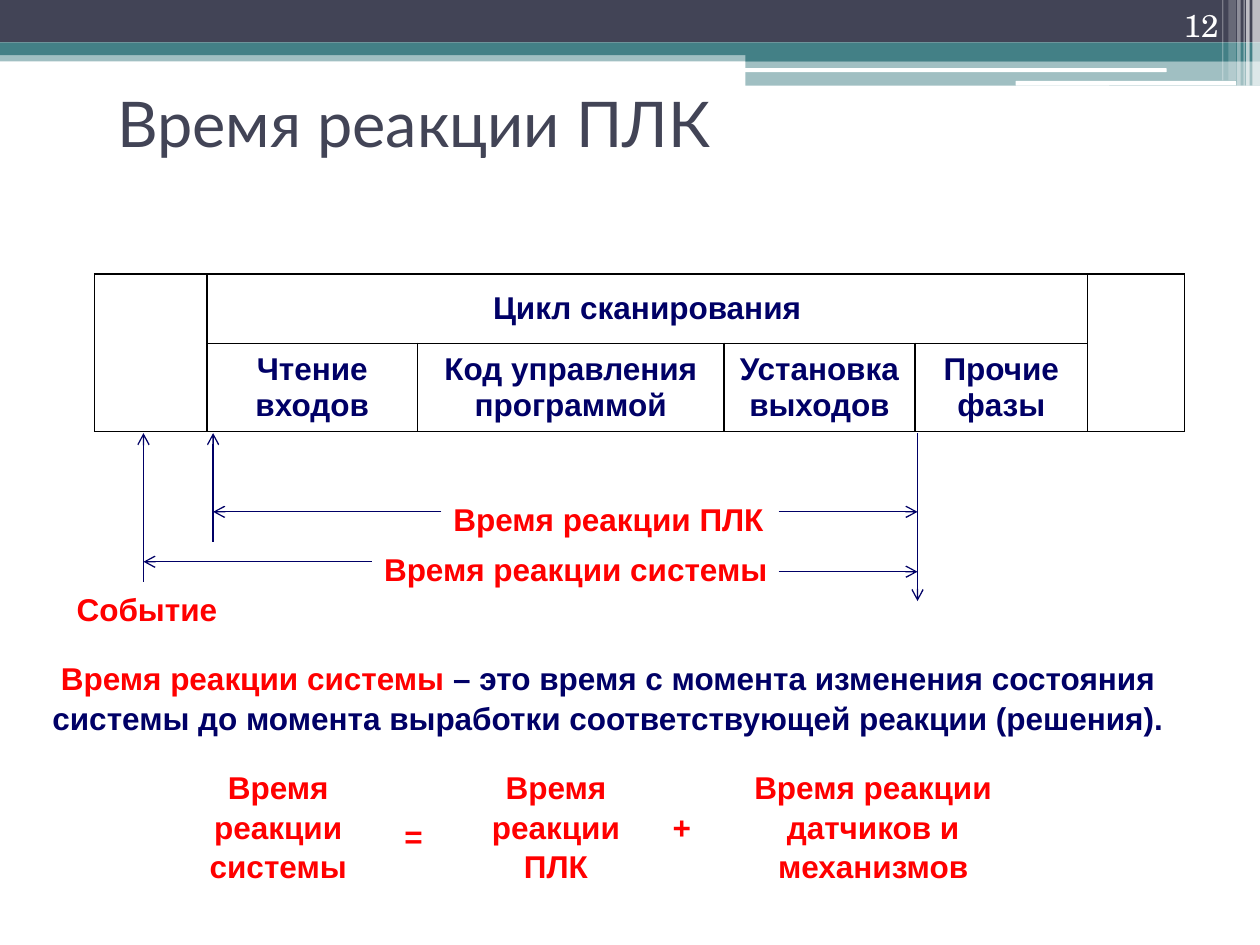
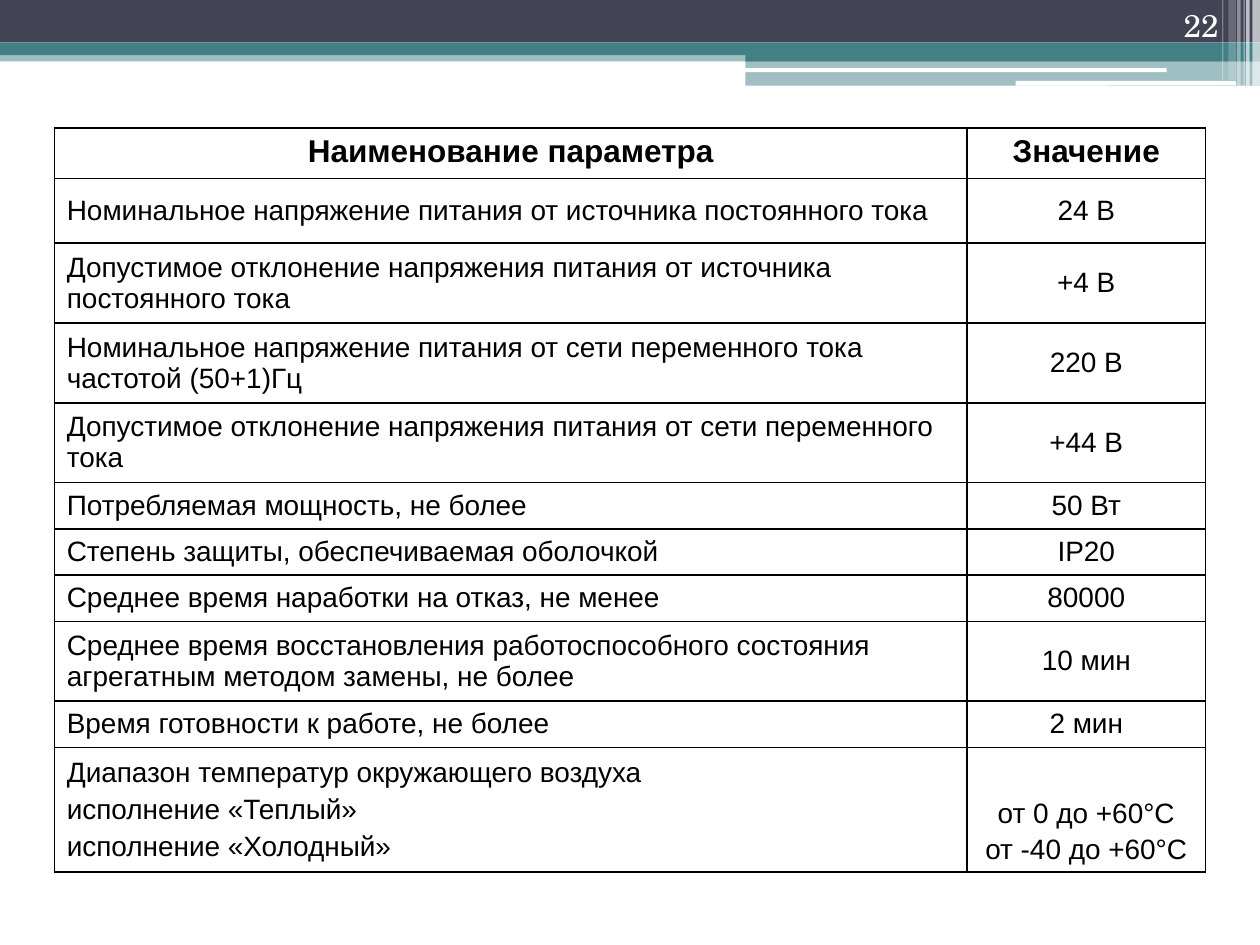
from lxml import etree
from pptx import Presentation
from pptx.dml.color import RGBColor
from pptx.enum.shapes import MSO_CONNECTOR, MSO_SHAPE
from pptx.enum.text import MSO_ANCHOR as Anchor, PP_ALIGN as Align
from pptx.oxml.ns import qn
from pptx.util import Pt

COLOURS = {
    "slate": "424456",
    "teal": "438086",
    "white": "FFFFFF",
    "black": "000000",
    "navy": "000066",
    "red": "FF0000",
}
BODY_FONT, TITLE_FONT, NUMBER_FONT = "Arial", "Lato", "TeX Gyre Schola"

# Header bands: left, top, width, height, colour, opacity in percent
BANDS = [
    (0, 28.8, 720, 6.3, "teal", 50),
    (0, 0, 720, 24.3, "slate", 100),
    (0, 24.3, 720, 7.2, "teal", 100),
    (426, 28, 294, 7.2, "teal", 100),
    (426, 35.2, 294, 13.7, "teal", 50),
]
RULES = [(425.5, 39, 241.2, 2.2), (580.3, 46.3, 126, 2.6)]
# Vertical stripes at the right edge: left, width, height, opacity
STRIPES = [
    (715.7, 4.3, 49, 65),
    (712.1, 2, 49, 65),
    (710.6, 0.7, 49, 60),
    (707, 2, 49, 40),
    (702, 4.3, 46, 20),
    (698.4, 0.7, 46, 30),
]

CYCLE_PHASES = ["Чтение входов", "Код управления программой",
                "Установка выходов", "Прочие фазы"]

# Parameter, value, row height
PARAMETERS = [
    ("Номинальное напряжение питания от источника постоянного тока", "24 В", 36.9),
    ("Допустимое отклонение напряжения питания от источника постоянного тока", "+4 В", 45.6),
    ("Номинальное напряжение питания от сети переменного тока частотой (50+1)Гц", "220 В", 45.6),
    ("Допустимое отклонение напряжения питания от сети переменного тока", "+44 В", 45.6),
    ("Потребляемая мощность, не более", "50 Вт", 26.3),
    ("Степень защиты, обеспечиваемая оболочкой", "IP20", 26.3),
    ("Среднее время наработки на отказ, не менее", "80000", 26.3),
    ("Среднее время восстановления работоспособного состояния "
     "агрегатным методом замены, не более", "10 мин", 45.6),
    ("Время готовности к работе, не более", "2 мин", 26.3),
    ("Диапазон температур окружающего воздуха\nисполнение «Теплый»\nисполнение «Холодный»",
     "от 0 до +60°С\nот -40 до +60°С", 71),
]


def rgb(name):
    return RGBColor.from_string(COLOURS[name])


def points(*lengths):
    return [Pt(length) for length in lengths]


def add_span(para, text, colour, size=18, bold=False, font=BODY_FONT):
    span = para.add_run()
    span.text = text
    span.font.name, span.font.size, span.font.bold = font, Pt(size), bold
    span.font.color.rgb = rgb(colour)


def add_box(page, area, spans, align=Align.LEFT, anchor=Anchor.TOP,
            spacing=1.05, **style):
    """Add a text box of one paragraph; spans are (text, colour) pairs."""
    frame = page.shapes.add_textbox(*points(*area)).text_frame
    frame.word_wrap = True
    frame.vertical_anchor = anchor
    para = frame.paragraphs[0]
    para.alignment, para.line_spacing = align, spacing
    for text, colour in spans:
        add_span(para, text, colour, **style)


def add_label(page, area, text, align=Align.LEFT):
    add_box(page, area, [(text, "red")], align, bold=True)


def add_band(page, area, colour, opacity=100, kind=MSO_SHAPE.RECTANGLE):
    band = page.shapes.add_shape(kind, *points(*area))
    band.shadow.inherit = False
    band.line.fill.background()
    band.fill.solid()
    band.fill.fore_color.rgb = rgb(colour)
    if opacity < 100:
        tint = band.fill._xPr.find(".//" + qn("a:srgbClr"))
        etree.SubElement(tint, qn("a:alpha"), val=str(opacity * 1000))


def add_arrow(page, *ends):
    arrow = page.shapes.add_connector(MSO_CONNECTOR.STRAIGHT, *points(*ends))
    arrow.line.color.rgb = rgb("navy")
    arrow.line.width = Pt(0.75)
    etree.SubElement(arrow.line._get_or_add_ln(), qn("a:tailEnd"), type="arrow")
    etree.SubElement(arrow._element.spPr, qn("a:effectLst"))


def style_cell(cell):
    """Black one-point borders on all sides and no fill."""
    properties = cell._tc.get_or_add_tcPr()
    for side in ("lnL", "lnR", "lnT", "lnB"):
        edge = etree.SubElement(properties, qn("a:" + side), w=str(Pt(1)))
        fill = etree.SubElement(edge, qn("a:solidFill"))
        etree.SubElement(fill, qn("a:srgbClr"), val=COLOURS["black"])
    cell.fill.background()


def add_grid(page, left, top, widths, heights):
    area = points(left, top, sum(widths), sum(heights))
    table = page.shapes.add_table(len(heights), len(widths), *area).table
    table.first_row = table.horz_banding = False
    for column, width in zip(table.columns, widths):
        column.width = Pt(width)
    for row, height in zip(table.rows, heights):
        row.height = Pt(height)
    for cell in table.iter_cells():
        style_cell(cell)
    return table


def fill_cell(cell, text, colour, size=18, bold=False,
              align=Align.CENTER, anchor=Anchor.MIDDLE):
    cell.vertical_anchor = anchor
    frame = cell.text_frame
    for index, line in enumerate(text.split("\n")):
        para = frame.add_paragraph() if index else frame.paragraphs[0]
        para.alignment = align
        if index:
            para.space_before = Pt(size * 0.2)
        add_span(para, line, colour, size, bold)


def add_page(deck, number):
    """Start a page with the shared header and its page number."""
    page = deck.slides.add_slide(deck.slide_layouts[6])
    for *area, colour, opacity in BANDS:
        add_band(page, area, colour, opacity)
    for area in RULES:
        add_band(page, area, "white", kind=MSO_SHAPE.ROUNDED_RECTANGLE)
    for left, width, height, opacity in STRIPES:
        add_band(page, (left, 0, width, height), "white", opacity)
    add_box(page, (643.7, 0, 59.8, 28.8), [(str(number), "white")],
            Align.RIGHT, Anchor.BOTTOM, spacing=1, font=NUMBER_FONT)
    return page


def add_scan_cycle(page):
    table = add_grid(page, 54, 156.7, [64.2, 120.5, 175, 109.3, 98.5, 55.5], [39.5, 50.2])
    for first, last in [((0, 0), (1, 0)), ((0, 1), (0, 4)), ((0, 5), (1, 5))]:
        table.cell(*first).merge(table.cell(*last))
    fill_cell(table.cell(0, 1), "Цикл сканирования", "navy", bold=True)
    for column, phase in enumerate(CYCLE_PHASES, start=1):
        fill_cell(table.cell(1, column), phase, "navy", bold=True)


def add_reaction_times(page):
    event, start, end, top = 82, 121.8, 524.3, 247.5
    # Moments in time
    add_arrow(page, end, top, end, 343.5)
    add_arrow(page, start, 309.5, start, top)
    add_arrow(page, event, 332.5, event, top)
    # Spans between them
    for origin, inner, left_y, right_y in [(start, 252.2, 292.5, 292.5),
                                           (event, 212.5, 321, 326.7)]:
        add_arrow(page, inner, left_y, origin, left_y)
        add_arrow(page, 445, right_y, end, right_y)
    add_label(page, (252, 281, 196, 28.8), "Время реакции ПЛК")
    add_label(page, (212.4, 309.5, 244, 28.8), "Время реакции системы")
    add_label(page, (36.7, 332.5, 108, 28.8), "Событие")


def add_formula(page):
    for left, width, term in [(105, 108, "Время реакции системы"),
                              (263.7, 108, "Время реакции ПЛК"),
                              (405.4, 187, "Время реакции датчиков и механизмов")]:
        add_label(page, (left, 434.3, width, 72), term, Align.CENTER)
    add_label(page, (224, 462.2, 26, 28.8), "=")
    add_label(page, (377.3, 457.2, 26, 28.8), "+")


def build_reaction_page(deck):
    page = add_page(deck, 12)
    add_box(page, (59.8, 44.6, 538.6, 51), [("Время реакции ПЛК", "slate")],
            spacing=1, size=36, font=TITLE_FONT)
    add_scan_cycle(page)
    add_reaction_times(page)
    add_box(page, (0, 372.2, 694.8, 50.4),
            [("Время реакции системы", "red"),
             (" – это время с момента изменения состояния системы до момента "
              "выработки соответствующей реакции (решения).", "navy")],
            Align.CENTER, bold=True)
    add_formula(page)


def build_parameter_page(deck):
    page = add_page(deck, 22)
    heights = [28.9] + [height for _, _, height in PARAMETERS]
    table = add_grid(page, 31, 73.2, [521.6, 136.3], heights)
    for column, heading in enumerate(["Наименование параметра", "Значение"]):
        fill_cell(table.cell(0, column), heading, "black", bold=True, anchor=Anchor.TOP)
    for row, (name, value, _) in enumerate(PARAMETERS, start=1):
        fill_cell(table.cell(row, 0), name, "black", 16, align=Align.LEFT)
        # Values of several lines stand level with the last lines of the name
        anchor = Anchor.BOTTOM if "\n" in value else Anchor.MIDDLE
        fill_cell(table.cell(row, 1), value, "black", 16, anchor=anchor)


def main():
    deck = Presentation()
    deck.slide_width, deck.slide_height = points(720, 540)
    build_reaction_page(deck)
    build_parameter_page(deck)
    deck.save("out.pptx")


if __name__ == "__main__":
    main()
